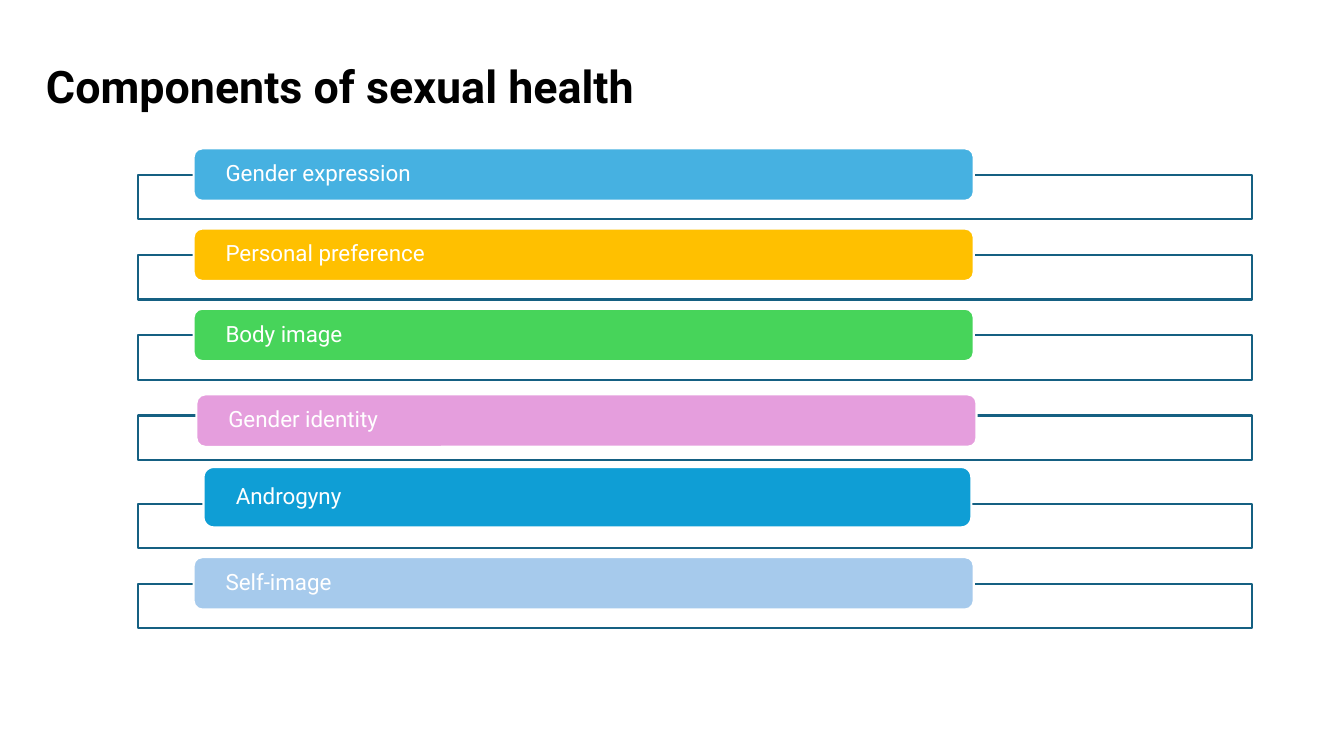
from pptx import Presentation
from pptx.dml.color import RGBColor
from pptx.enum.shapes import MSO_SHAPE
from pptx.enum.text import MSO_ANCHOR, PP_ALIGN
from pptx.oxml.ns import qn
from pptx.util import Cm, Pt
from lxml import etree

RECT, ROUND = MSO_SHAPE.RECTANGLE, MSO_SHAPE.ROUNDED_RECTANGLE
MIDDLE, BOTTOM = MSO_ANCHOR.MIDDLE, MSO_ANCHOR.BOTTOM
LEFT = PP_ALIGN.LEFT

TITLE = "Components of sexual health"
BAR = dict(left=4.88, rise=0.67, width=19.66, height=1.32)
ROWS = [
    ("Gender expression", "46B1E1", {}),
    ("Personal preference", "FFC000", {}),
    ("Body image", "47D45A", {}),
    ("Gender identity", "E59EDD", dict(left=4.95, rise=0.53)),
    ("Androgyny", "0F9ED5", dict(left=5.13, rise=0.92, width=19.35, height=1.52)),
    ("Self-image", "A6CAEC", {}),
]
THEME = dict(font="Roboto", title=32, label=16, ink="000000",
             paper="FFFFFF", edge="156082", line=1.5)
FRAME = dict(left=3.48, top=4.41, width=28.07, height=1.12)
STEP = 2.02
GAP, GAP_ROW = 0.2, 4

deck = Presentation()
deck.slide_width, deck.slide_height = Cm(33.87), Cm(19.05)
slide = deck.slides.add_slide(deck.slide_layouts[6])


def color(name):
    return RGBColor.from_string(THEME.get(name, name))


def write(shape, text, size, ink, anchor, pads, bold=False):
    frame = shape.text_frame
    frame.word_wrap = True
    frame.vertical_anchor = anchor
    side, foot = pads
    frame.margin_left = frame.margin_right = Cm(side)
    frame.margin_top, frame.margin_bottom = Cm(0), Cm(foot)
    para = frame.paragraphs[0]
    para.alignment = LEFT
    para.line_spacing = 0.9
    run = para.add_run()
    run.text = text
    run.font.name = THEME["font"]
    run.font.size = Pt(THEME[size])
    run.font.bold = bold
    run.font.color.rgb = color(ink)


def block(kind, left, top, width, height, fill, line):
    shape = slide.shapes.add_shape(kind, Cm(left), Cm(top), Cm(width), Cm(height))
    shape.shadow.inherit = False
    shape.fill.solid()
    shape.fill.fore_color.rgb = color(fill)
    shape.line.color.rgb = color(line)
    shape.line.width = Pt(THEME["line"])
    return shape


def fade(shape, share):
    tint = shape.fill._xPr.find(qn("a:solidFill"))[0]
    etree.SubElement(tint, qn("a:alpha")).set("val", str(share * 1000))


head = slide.shapes.add_textbox(Cm(0.91), Cm(0), Cm(28.3), Cm(3.33))
write(head, TITLE, "title", "ink", BOTTOM, (0.25, 0.48), True)

for row, (label, fill, change) in enumerate(ROWS):
    top = FRAME["top"] + row * STEP + (GAP if row >= GAP_ROW else 0)
    frame = block(RECT, FRAME["left"], top, FRAME["width"], FRAME["height"],
                  "paper", "edge")
    fade(frame, 90)
    bar = {**BAR, **change}
    shape = block(ROUND, bar["left"], top - bar["rise"], bar["width"],
                  bar["height"], fill, "paper")
    write(shape, label, "label", "paper", MIDDLE, (0.74, 0))

deck.save("out.pptx")
